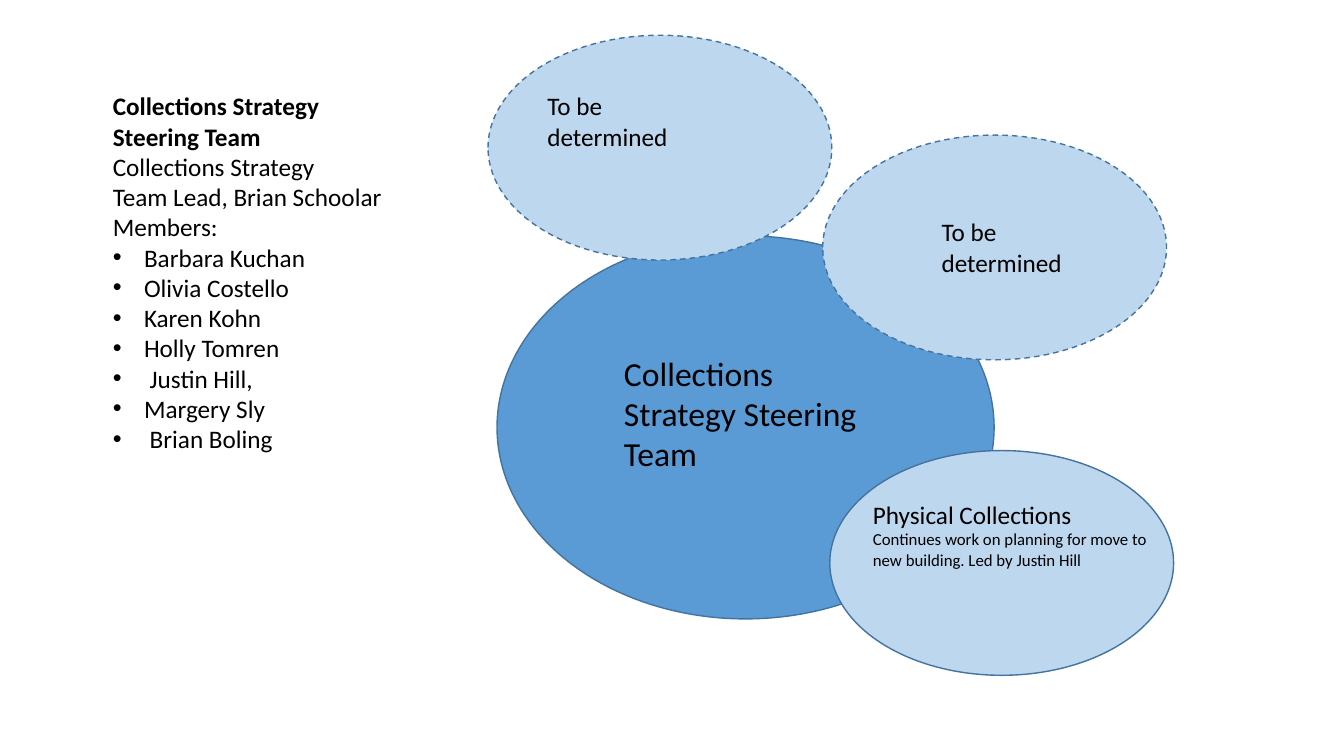
from dataclasses import dataclass
from lxml.etree import SubElement
from pptx import Presentation
from pptx.dml.color import RGBColor
from pptx.enum.dml import MSO_LINE
from pptx.enum.shapes import MSO_SHAPE
from pptx.oxml.ns import qn
from pptx.util import Inches, Pt


@dataclass(frozen=True)
class Theme:
    """Colours, font and type sizes of the slide."""
    core: str = "5B9BD5"
    pale: str = "BDD7EE"
    edge: str = "43739E"
    ink: str = "000000"
    font: str = "Calibri"
    head: int = 24
    body: int = 18
    note: int = 12


THEME = Theme()
WIDE, HIGH = 13.33, 7.5
TEAM = "Collections Strategy Steering Team"
OPEN = "To be determined"
LEAD = ["Collections Strategy", "Team Lead, Brian Schoolar", "Members:"]
NAMES = ["Barbara Kuchan", "Olivia Costello", "Karen Kohn", "Holly Tomren",
         " Justin Hill,", "Margery Sly", " Brian Boling"]
WORK = "Continues work on planning for move to new building. Led by Justin Hill"
SMALL = (3.41, 2.23)


def draw_oval(slide, box, fill, dashed=False):
    """Draw one ellipse that fills the box."""
    oval = slide.shapes.add_shape(MSO_SHAPE.OVAL, *map(Inches, box))
    oval.shadow.inherit = False
    oval.fill.solid()
    oval.fill.fore_color.rgb = RGBColor.from_string(fill)
    oval.line.color.rgb = RGBColor.from_string(THEME.edge)
    oval.line.width = Pt(1)
    if dashed:
        oval.line.dash_style = MSO_LINE.DASH


def add_bullet(para):
    """Give a paragraph a hanging round bullet."""
    props = para._p.get_or_add_pPr()
    props.set("marL", str(Inches(0.31)))
    props.set("indent", str(-Inches(0.31)))
    SubElement(props, qn("a:buFont")).set("typeface", "Arial")
    SubElement(props, qn("a:buChar")).set("char", "•")


def write_text(slide, box, lines):
    """Write (text, size, bold) lines in the box and return the paragraphs."""
    frame = slide.shapes.add_textbox(*map(Inches, box)).text_frame
    frame.word_wrap = True
    for i, (text, size, bold) in enumerate(lines):
        para = frame.add_paragraph() if i else frame.paragraphs[0]
        para.text = text
        para.font.name = THEME.font
        para.font.size = Pt(size)
        para.font.bold = bold
        para.font.color.rgb = RGBColor.from_string(THEME.ink)
    return frame.paragraphs


def draw_group(slide, box, inset, lines, fill, dashed=False):
    """Draw an oval with text in a box inset from its corner."""
    left, top = box[:2]
    draw_oval(slide, box, fill, dashed)
    dx, dy, width, height = inset
    write_text(slide, (left + dx, top + dy, width, height), lines)


def list_team(slide, box):
    """List the team's lead and its bulleted members."""
    lines = [(TEAM, THEME.body, True)]
    lines += [(text, THEME.body, False) for text in LEAD + NAMES]
    for para in write_text(slide, box, lines)[-len(NAMES):]:
        add_bullet(para)


def draw_map(slide, left, top):
    """Draw the core team and the groups that overlap it."""
    core = [(TEAM, THEME.head, False)]
    work = [("Physical Collections", THEME.body, False), (WORK, THEME.note, False)]
    free = [(OPEN, THEME.body, False)]
    groups = [
        ((0.09, 1.99, 4.93, 3.8), (1.16, 1.11, 2.69, 1.31), core, THEME.core, False),
        ((3.39, 4.12, *SMALL), (0.33, 0.43, 3.23, 0.81), work, THEME.pale, False),
        ((3.32, 0.99, *SMALL), (1.08, 0.76, 1.52, 0.71), free, THEME.pale, True),
        ((0, 0, *SMALL), (0.49, 0.5, 1.52, 0.71), free, THEME.pale, True),
    ]
    for (dx, dy, width, height), *rest in groups:
        draw_group(slide, (left + dx, top + dy, width, height), *rest)


def main():
    """Build and save the slide."""
    deck = Presentation()
    deck.slide_width, deck.slide_height = Inches(WIDE), Inches(HIGH)
    slide = deck.slides.add_slide(deck.slide_layouts[6])
    list_team(slide, (1.02, 0.85, 3.12, 4.95))
    draw_map(slide, 4.84, 0.35)
    deck.save("out.pptx")


if __name__ == "__main__":
    main()
